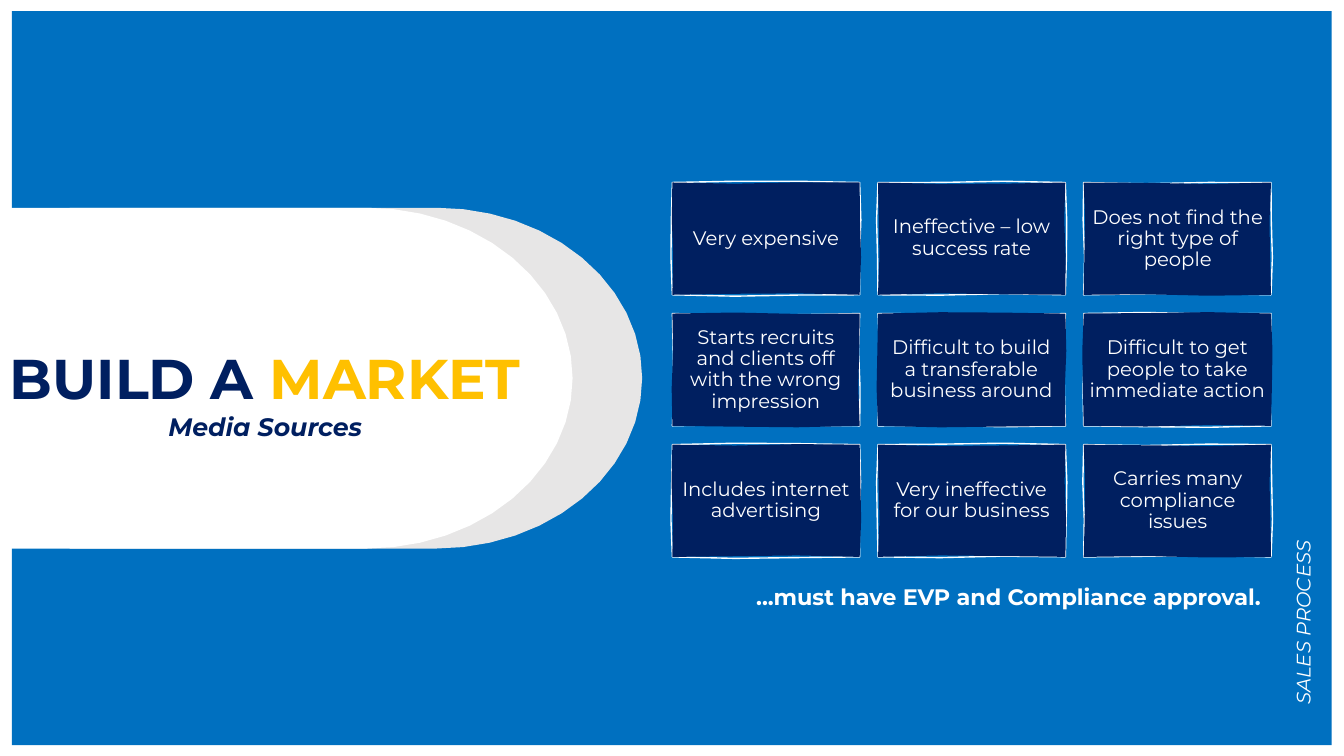
from copy import deepcopy
from math import cos, pi, sin

from pptx import Presentation
from pptx.dml.color import RGBColor
from pptx.enum import shapes, text
from pptx.oxml import ns
from pptx.util import Pt

BLUE = RGBColor(0x00, 0x70, 0xC0)
NAVY = RGBColor(0x00, 0x1F, 0x60)
GOLD = RGBColor(0xFF, 0xC0, 0x00)
GRAY = RGBColor(0xE7, 0xE6, 0xE6)
WHITE = RGBColor(0xFF, 0xFF, 0xFF)
FONT = "Montserrat"

ARC_STEPS = 24
CARD_W, CARD_H = 133.8, 80.2
CARD_LEFT, CARD_TOP = 480.3, 130.4
PITCH_X, PITCH_Y = 146.9, 93.6
WOBBLE, SIDE_STEPS = 1.2, 3
CARDS = [
    ["Very expensive", "Ineffective – low success rate",
     "Does not find the right type of people"],
    ["Starts recruits and clients off with the wrong impression",
     "Difficult to build a transferable business around",
     "Difficult to get people to take immediate action"],
    ["Includes internet advertising", "Very ineffective for our business",
     "Carries many compliance issues"],
]


def style(r, size, color, bold=False, italic=False):
    f = r.font
    f.name, f.size, f.bold, f.italic = FONT, Pt(size), bold, italic
    f.color.rgb = color


def paint(sp, fill):
    sp.shadow.inherit = False
    sp.fill.solid()
    sp.fill.fore_color.rgb = fill
    sp.line.fill.background()


def add_outline(s, *contours):
    """Draw closed contours, given as lists of (x, y) in points."""
    contours = [[(Pt(x), Pt(y)) for x, y in c] for c in contours]
    builder = s.shapes.build_freeform(*contours[0][0])
    builder.add_line_segments(contours[0][1:])
    for c in contours[1:]:
        builder.move_to(*c[0])
        builder.add_line_segments(c[1:])
    return builder.convert_to_shape()


def add_tab(s, left, straight, fill):
    """Draw a band with a half-ellipse at its right end."""
    top, rx, ry = 148.4, 146.9, 121.7
    angles = [pi * i / ARC_STEPS for i in range(ARC_STEPS + 1)]
    arc = [(left + straight + rx * sin(a), top + ry - ry * cos(a)) for a in angles]
    paint(add_outline(s, [(left, top), *arc, (left, top + 2 * ry)]), fill)


def wavy_box(x, y, seed):
    """Return the points of a card's edge with a slight hand-drawn wave."""
    corners = [(x, y), (x + CARD_W, y), (x + CARD_W, y + CARD_H), (x, y + CARD_H)]
    points = []
    for side, (x0, y0) in enumerate(corners):
        x1, y1 = corners[(side + 1) % 4]
        for i in range(SIDE_STEPS):
            t = i / SIDE_STEPS
            wave = WOBBLE * sin(pi * t) * sin(5 * pi * t + seed + 2 * side)
            dx, dy = (0, wave) if side % 2 == 0 else (wave, 0)
            points.append((x0 + (x1 - x0) * t + dx, y0 + (y1 - y0) * t + dy))
    return points


def split_line_and_fill(sp):
    """Stroke only the first contour and fill only the second."""
    line_path = sp._element.find(".//" + ns.qn("a:path"))
    fill_path = deepcopy(line_path)
    half = len(line_path) // 2
    for node in list(line_path)[half:]:
        line_path.remove(node)
    for node in list(fill_path)[:half]:
        fill_path.remove(node)
    line_path.set("fill", "none")
    fill_path.set("stroke", "0")
    line_path.addnext(fill_path)


def add_card(s, x, y, label, seed):
    sp = add_outline(s, wavy_box(x, y, seed), wavy_box(x, y, seed + 2))
    split_line_and_fill(sp)
    paint(sp, NAVY)
    sp.line.color.rgb = WHITE
    sp.line.width = Pt(1)
    tf = sp.text_frame
    tf.word_wrap = True
    tf.vertical_anchor = text.MSO_ANCHOR.MIDDLE
    tf.margin_left = tf.margin_right = tf.margin_top = tf.margin_bottom = Pt(5.3)
    tf.text = label
    p = tf.paragraphs[0]
    p.alignment = text.PP_ALIGN.CENTER
    p.line_spacing, p.space_after = 0.9, Pt(5)
    style(p.runs[0], 14, WHITE)


def add_text(s, box, content, size, color, align=text.PP_ALIGN.LEFT, **looks):
    sp = s.shapes.add_textbox(*(Pt(v) for v in box))
    tf = sp.text_frame
    tf.word_wrap = True
    tf.text = content
    p = tf.paragraphs[0]
    p.alignment = align
    style(p.runs[0], size, color, **looks)
    return sp


def add_title(s):
    tf = add_text(s, (0, 241.9, 387.4, 77.8), "BUILD A ", 40, NAVY, bold=True).text_frame
    tf.word_wrap = False
    r = tf.paragraphs[0].add_run()
    r.text = "MARKET"
    style(r, 40, GOLD, bold=True)
    p = tf.add_paragraph()
    p.text = "Media Sources"
    p.alignment = text.PP_ALIGN.CENTER
    style(p.runs[0], 18, NAVY, bold=True, italic=True)


def main():
    prs = Presentation()
    prs.slide_width, prs.slide_height = Pt(960), Pt(540)
    s = prs.slides.add_slide(prs.slide_layouts[6])
    panel = s.shapes.add_shape(shapes.MSO_SHAPE.RECTANGLE,
                               Pt(8.5), Pt(8), Pt(942.7), Pt(524.2))
    paint(panel, BLUE)
    add_tab(s, 49.7, 262.1, GRAY)
    add_tab(s, 0, 262.1, WHITE)
    add_title(s)
    for row, labels in enumerate(CARDS):
        for col, label in enumerate(labels):
            add_card(s, CARD_LEFT + col * PITCH_X, CARD_TOP + row * PITCH_Y,
                     label, 3 * row + col)
    add_text(s, (480.3, 413.3, 427.6, 26.6), "...must have EVP and Compliance approval.",
             16, WHITE, text.PP_ALIGN.RIGHT, bold=True)
    side_label = add_text(s, (848.2, 415.4, 165.6, 24.5), "SALES PROCESS",
                          14, WHITE, italic=True)
    side_label.rotation = 270
    prs.save("out.pptx")


if __name__ == "__main__":
    main()
